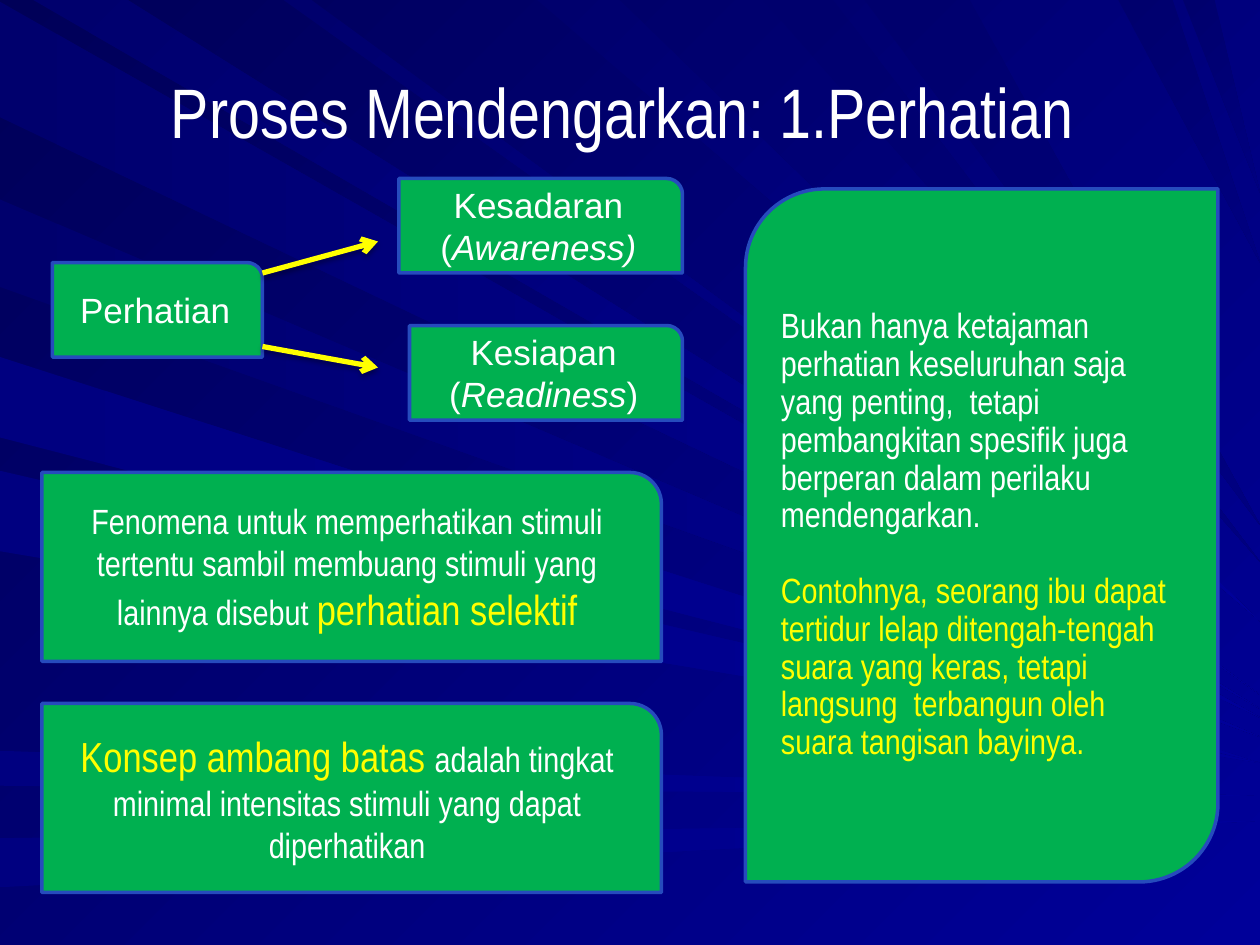
import pptx
import pptx.util
import pptx.dml.color
import pptx.enum.shapes
import pptx.enum.text
import pptx.oxml
import pptx.oxml.ns
from dataclasses import dataclass

Pt = pptx.util.Pt
SHAPE = pptx.enum.shapes.MSO_SHAPE
ALIGN = pptx.enum.text.PP_ALIGN
MIDDLE = pptx.enum.text.MSO_ANCHOR.MIDDLE


@dataclass(frozen=True)
class Theme:
    night: str = "000058"
    dusk: str = "00006D"
    navy: str = "000080"
    blue: str = "000099"
    green: str = "00B050"
    border: str = "264BBD"
    white: str = "FFFFFF"
    yellow: str = "FFFF00"
    title_size: int = 40
    accent_size: int = 24
    body_size: int = 20
    font: str = "Arial"
    narrow: str = "Arial Narrow"


THEME = Theme()

# Light rays by starting edge: start along the edge, width there, tip height at the right
LEFT_RAYS = [(1, 66, 410), (114, 50, 421), (204, 46, 436), (269, 46, 436),
             (429, 20, 455), (479, 28, 469)]
TOP_RAYS = [(19, 54, 405), (162, 16, 397), (307, 47, 355), (436, 40, 321),
            (494, 60, 300), (639, 31, 150), (676, 18, 110)]


def rgb(code):
    return pptx.dml.color.RGBColor.from_string(code)


def paint(fill, first, last=None, angle=0):
    if last is None:
        fill.solid()
        fill.fore_color.rgb = rgb(first)
        return
    fill.gradient()
    fill.gradient_angle = -angle % 360
    for stop, code in zip(fill.gradient_stops, (first, last)):
        stop.color.rgb = rgb(code)


def write(para, text, size=THEME.body_size, color=THEME.white, font=THEME.font, italic=False):
    span = para.add_run()
    span.text = text
    span.font.size = Pt(size)
    span.font.name = font
    span.font.color.rgb = rgb(color)
    span.font.italic = italic


def place_ray(page, corners, first, last, angle):
    points = [(Pt(x), Pt(y)) for x, y in corners]
    builder = page.shapes.build_freeform(*points[0])
    builder.add_line_segments(points[1:])
    ray = builder.convert_to_shape()
    ray.shadow.inherit = False
    ray.line.fill.background()
    paint(ray.fill, first, last, angle)


def place_backdrop(page, box):
    left, top, width, height = box
    right = left + width
    paint(page.background.fill, THEME.night, THEME.blue, 45)
    for start, breadth, tip in LEFT_RAYS:
        corners = [(left, top + start), (left, top + start + breadth), (right, top + tip)]
        # Rays lower down start brighter
        first = THEME.dusk if start < height / 3 else THEME.navy
        place_ray(page, corners, first, THEME.blue, 0)
    for start, breadth, tip in TOP_RAYS:
        corners = [(left + start, top), (left + start + breadth, top), (right, top + tip)]
        # Rays in the right half stay darker
        last = THEME.blue if start < width / 2 else THEME.navy
        place_ray(page, corners, THEME.dusk, last, 45)


def place_title(page, box, text):
    frame = page.shapes.add_textbox(*map(Pt, box)).text_frame
    frame.word_wrap = True
    frame.vertical_anchor = MIDDLE
    para = frame.paragraphs[0]
    para.alignment = ALIGN.CENTER
    write(para, text, size=THEME.title_size, font=THEME.narrow)


def place_card(page, box, paragraphs, preset=SHAPE.ROUND_1_RECTANGLE, align=ALIGN.CENTER,
               spacing=None, gap=0):
    """Each paragraph is a list of (text, format) pairs."""
    card = page.shapes.add_shape(preset, *map(Pt, box))
    card.shadow.inherit = False
    paint(card.fill, THEME.green)
    card.line.color.rgb = rgb(THEME.border)
    card.line.width = Pt(2)
    frame = card.text_frame
    frame.word_wrap = True
    frame.vertical_anchor = MIDDLE
    for index, spans in enumerate(paragraphs):
        para = frame.add_paragraph() if index else frame.paragraphs[0]
        para.alignment = align
        para.line_spacing = spacing
        if index:
            para.space_before = Pt(gap)
        for text, look in spans:
            write(para, text, **look)


def place_arrow(page, start, end):
    arrow = page.shapes.add_connector(pptx.enum.shapes.MSO_CONNECTOR.STRAIGHT,
                                      *map(Pt, start + end))
    arrow.line.color.rgb = rgb(THEME.yellow)
    arrow.line.width = Pt(3)
    namespace = pptx.oxml.ns.nsdecls("a")
    properties = arrow._element.spPr
    properties.find(pptx.oxml.ns.qn("a:ln")).append(
        pptx.oxml.parse_xml(f'<a:tailEnd {namespace} type="arrow"/>'))
    properties.append(pptx.oxml.parse_xml(
        f'<a:effectLst {namespace}><a:outerShdw blurRad="{Pt(3.1)}" dist="{Pt(1.8)}" '
        'dir="5400000" rotWithShape="0"><a:srgbClr val="000000"><a:alpha val="35000"/>'
        '</a:srgbClr></a:outerShdw></a:effectLst>'))


def place_attention_map(page, box):
    left, top, width, height = box
    right, card_height = left + width, 54
    place_card(page, (left, top + 48, 120, card_height), [[("Perhatian", {})]])
    place_card(page, (right - 156, top + height - card_height, 156, card_height),
               [[("Kesiapan (", {}), ("Readiness", {"italic": True}), (")", {})]])
    place_card(page, (right - 162, top, 162, card_height),
               [[("Kesadaran (", {}), ("Awareness)", {"italic": True})]])
    for start_drop, end_drop in ((54, 36), (96, 108)):
        place_arrow(page, (left + 120, top + start_drop), (left + 186, top + end_drop))


def place_concepts(page, box):
    left, top, width, height = box
    card_height = 108
    plain = {"font": THEME.narrow}
    accent = {"font": THEME.narrow, "size": THEME.accent_size, "color": THEME.yellow}
    concepts = [
        [("Fenomena untuk memperhatikan stimuli tertentu sambil membuang stimuli yang "
          "lainnya disebut ", plain), ("perhatian selektif", accent)],
        [("Konsep ambang batas ", accent),
         ("adalah tingkat minimal intensitas stimuli yang dapat diperhatikan", plain)],
    ]
    for row, spans in enumerate(concepts):
        place_card(page, (left, top + row * (height - card_height), width, card_height), [spans])


def place_example(page, box):
    place_card(page, box, [
        [("Bukan hanya ketajaman perhatian keseluruhan saja yang penting,  tetapi "
          "pembangkitan spesifik juga berperan dalam perilaku mendengarkan.",
          {"font": THEME.narrow})],
        [("Contohnya, seorang ibu dapat tertidur lelap ditengah-tengah suara yang keras, "
          "tetapi langsung  terbangun oleh suara tangisan bayinya.",
          {"font": THEME.narrow, "color": THEME.yellow})],
    ], preset=SHAPE.ROUND_2_DIAG_RECTANGLE, align=ALIGN.LEFT, spacing=0.9, gap=21.6)


def main():
    deck = pptx.Presentation()
    deck.slide_width, deck.slide_height = Pt(720), Pt(540)
    page = deck.slides.add_slide(deck.slide_layouts[6])
    place_backdrop(page, (0, 0, 720, 540))
    place_title(page, (36, 36, 648, 54), "Proses Mendengarkan: 1.Perhatian ")
    place_attention_map(page, (30, 102, 360, 138))
    place_concepts(page, (24, 270, 354, 240))
    place_example(page, (426, 108, 270, 396))
    deck.save("out.pptx")


if __name__ == "__main__":
    main()
